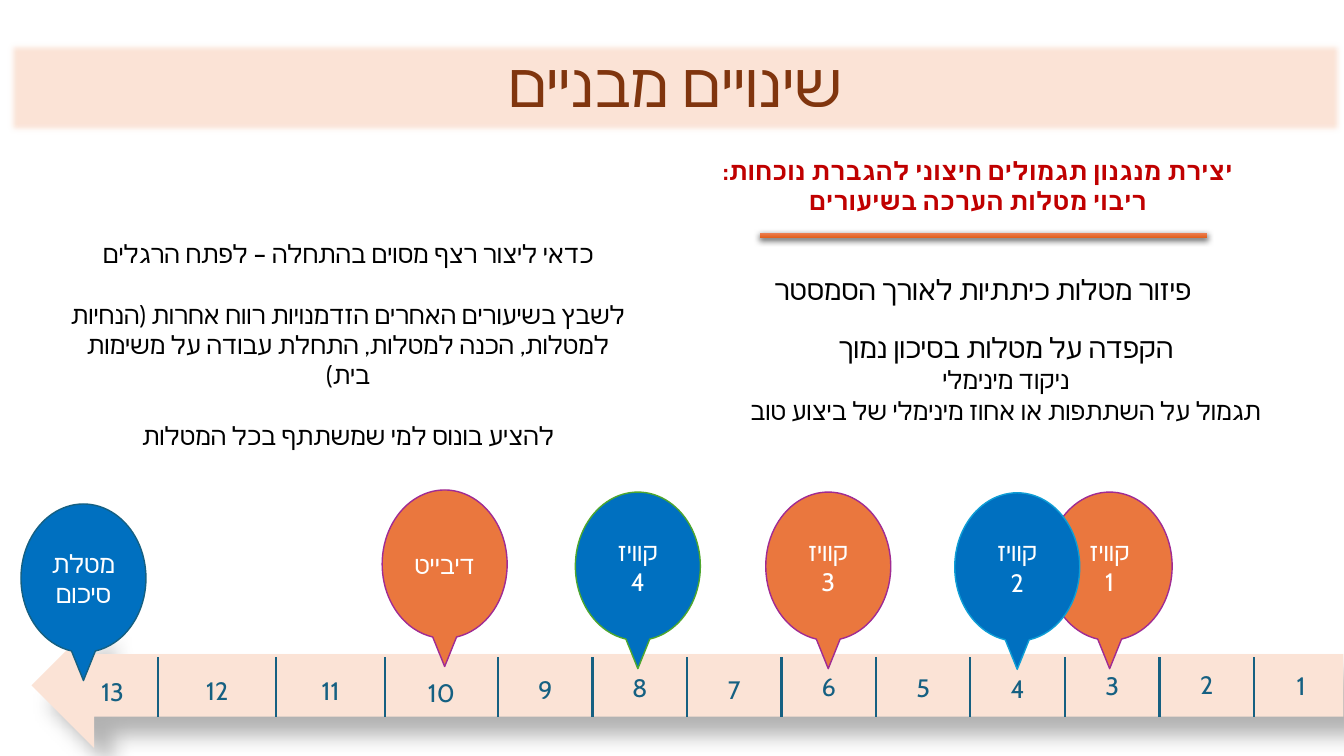
from lxml import etree
from pptx import Presentation
from pptx.dml.color import RGBColor
from pptx.enum import shapes, text
from pptx.oxml import ns
from pptx.util import Pt

PEACH, BROWN = RGBColor(0xFB, 0xE3, 0xD6), RGBColor(0x80, 0x35, 0x0E)
RED, BLACK = RGBColor(0xC0, 0, 0), RGBColor(0, 0, 0)
WHITE, TEAL = RGBColor(255, 255, 255), RGBColor(0x15, 0x60, 0x82)
ORANGE, BLUE = RGBColor(0xEA, 0x77, 0x3E), RGBColor(0, 0x70, 0xC0)
PURPLE, SKY = RGBColor(0xA0, 0x2B, 0x93), RGBColor(0x0F, 0x9E, 0xD5)
GREEN = RGBColor(0x4E, 0xA7, 0x2E)
BAR_STOPS = RGBColor(0xED, 0x82, 0x57), RGBColor(0xE2, 0x5F, 0x1A)

TITLE = "שינויים מבניים"
# box, colour, bold, space before each paragraph, paragraphs of (text, size)
TEXTS = [
    ((433, 103, 531, 59), RED, True, 0, [
        ("יצירת מנגנון תגמולים חיצוני להגברת נוכחות:", 18),
        ("ריבוי מטלות הערכה בשיעורים", 18)]),
    ((510, 164, 384, 85), BLACK, False, 0, [("פיזור מטלות כיתתיות לאורך הסמסטר", 20)]),
    ((495, 222, 447, 96), BLACK, False, 0, [
        ("הקפדה על מטלות בסיכון נמוך", 20),
        ("ניקוד מינימלי", 18),
        ("תגמול על השתתפות או אחוז מינימלי של ביצוע טוב", 18)]),
    ((40, 167, 417.4, 158), BLACK, False, 21.6, [
        ("כדאי ליצור רצף מסוים בהתחלה – לפתח הרגלים", 18),
        ("לשבץ בשיעורים האחרים הזדמנויות רווח אחרות (הנחיות למטלות, הכנה למטלות, "
         "התחלת עבודה על משימות בית)", 18),
        ("להציע בונוס למי שמשתתף בכל המטלות", 18)]),
]
# left, top, fill, outline, lines
TASKS = [
    (748, 351.5, ORANGE, PURPLE, ["קוויז", "1"]),
    (682, 352, BLUE, SKY, ["קוויז", "2"]),
    (547, 351.5, ORANGE, PURPLE, ["קוויז", "3"]),
    (411, 351.5, BLUE, GREEN, ["קוויז", "4"]),
    (273, 350, ORANGE, PURPLE, ["דיבייט"]),
    (15, 360, BLUE, TEAL, ["מטלת סיכום"]),
]
WEEK_TOPS = [474, 473, 474, 476, 475, 474.5, 476.5, 475, 476.5, 479, 477.5, 477.5, 478]
# Weeks run right to left; the first nine are equally wide
WEEK_EDGES = [963.2 - 67.5 * i for i in range(10)] + [275, 197.3, 113, 48]


def add_effect(s, tag, children="", **attrs):
    s.shadow.inherit = False
    effects = s._element.spPr.find(ns.qn("a:effectLst"))
    effect = etree.SubElement(effects, ns.qn("a:" + tag), {k: str(v) for k, v in attrs.items()})
    return effect


def add_shadow(s, blur, dist, degrees, alpha):
    effect = add_effect(s, "outerShdw", blurRad=int(Pt(blur)), dist=int(Pt(dist)),
                        dir=degrees * 60000, algn="ctr", rotWithShape=0)
    color = etree.SubElement(effect, ns.qn("a:srgbClr"), val="000000")
    etree.SubElement(color, ns.qn("a:alpha"), val=str(alpha * 1000))


def write(s, paragraphs, color, font="Cabin", bold=False, gap=0):
    """Fill a shape with centred (text, size) paragraphs; Hebrew ones run right to left."""
    tf = s.text_frame
    tf.word_wrap = True
    tf.vertical_anchor = text.MSO_ANCHOR.MIDDLE
    for i, (line, size) in enumerate(paragraphs):
        p = tf.add_paragraph() if i else tf.paragraphs[0]
        p.alignment = text.PP_ALIGN.CENTER
        p.space_before = Pt(gap if i else 0)
        if not line.isdigit():
            p._p.get_or_add_pPr().set("rtl", "1")
        r = p.add_run()
        r.text = line
        for name, value in dict(name=font, size=Pt(size), bold=bold).items():
            setattr(r.font, name, value)
        r.font.color.rgb = color
        etree.SubElement(r._r.get_or_add_rPr(), ns.qn("a:cs"), typeface=font)


def add_shape(kind, box, fill=None, line=None):
    s = slide.shapes.add_shape(kind, *map(Pt, box))
    s.shadow.inherit = False
    if fill is not None:
        s.fill.solid()
        s.fill.fore_color.rgb = fill
    if line is None:
        s.line.fill.background()
    else:
        s.line.color.rgb = line
        s.line.width = Pt(1)
    return s


def add_text(box, *args, **kwargs):
    write(slide.shapes.add_textbox(*map(Pt, box)), *args, **kwargs)


prs = Presentation()
prs.slide_width, prs.slide_height = Pt(960), Pt(540)
slide = prs.slides.add_slide(prs.slide_layouts[6])
kinds = shapes.MSO_SHAPE

banner = add_shape(kinds.RECTANGLE, (5, 28.8, 954.7, 67), PEACH)
add_effect(banner, "softEdge", rad=int(Pt(5)))
write(banner, [(TITLE, 44)], BROWN, "Calibri")
banner.text_frame.paragraphs[0].line_spacing = 0.9

for box, color, bold, gap, paragraphs in TEXTS:
    add_text(box, paragraphs, color, bold=bold, gap=gap)

bar = add_shape(kinds.RECTANGLE, (543, 166.3, 319, 3.6))
bar.fill.gradient()
bar.fill.gradient_angle = 270
for stop, color in zip(bar.fill.gradient_stops, BAR_STOPS):
    stop.color.rgb = color
add_shadow(bar, 4.5, 1.5, 90, 63)

timeline = add_shape(kinds.LEFT_ARROW, (22.5, 445, 937, 89.3), PEACH)
add_shadow(timeline, 15, 18, 45, 30)

for x in WEEK_EDGES[1:-1]:
    divider = slide.shapes.add_connector(
        shapes.MSO_CONNECTOR.STRAIGHT, Pt(x), Pt(469.5), Pt(x), Pt(512))
    divider.line.color.rgb = TEAL
    divider.line.width = Pt(1.5)
    etree.SubElement(divider._element.spPr, ns.qn("a:effectLst"))

for week, (right, left, top) in enumerate(zip(WEEK_EDGES, WEEK_EDGES[1:], WEEK_TOPS), 1):
    width = 42.5 if week < 10 else 54
    add_text(((left + right - width) / 2, top, width, 31.7), [(str(week), 18)], TEAL)

for left, top, fill, line, lines in TASKS:
    s = add_shape(kinds.OVAL_CALLOUT, (left, top, 89.3, 106), fill, line)
    s.adjustments[0], s.adjustments[1] = 0, 0.69
    write(s, [(label, 18) for label in lines], WHITE)

prs.save("out.pptx")
